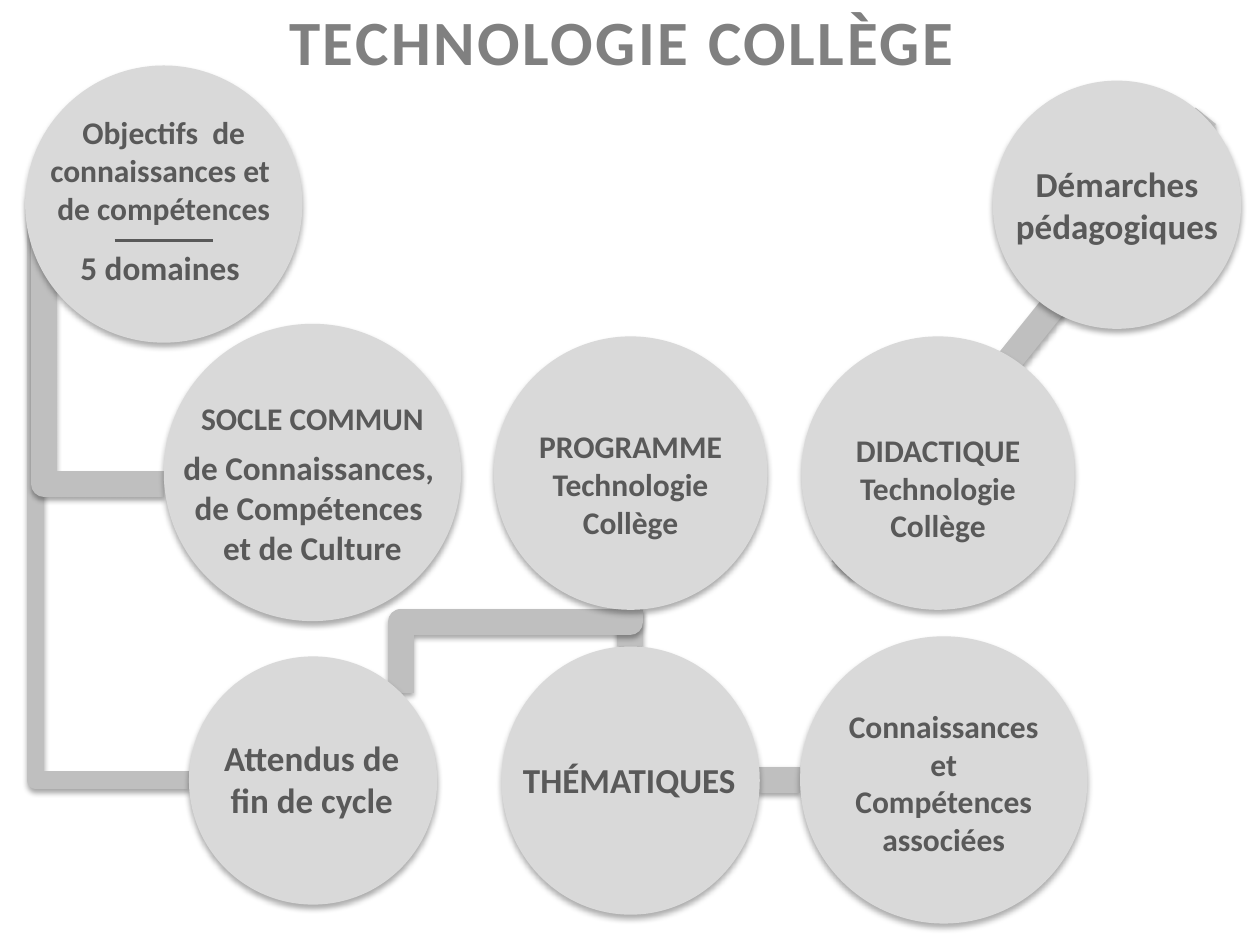
import pptx
import pptx.util
import pptx.dml.color
import pptx.enum.shapes
import pptx.enum.text
import pptx.oxml
import pptx.oxml.ns

Inches, Pt = pptx.util.Inches, pptx.util.Pt
ALIGN = pptx.enum.text.PP_ALIGN
CONNECTOR = pptx.enum.shapes.MSO_CONNECTOR
FONT = "Calibri"
COLORS = {"title": "808080", "text": "595959", "disc": "D9D9D9", "link": "BFBFBF", "shadow": "000000"}

TITLE = "TECHNOLOGIE COLLÈGE "

# start, end, width in points
STRAIGHT_LINKS = [
    ((5, 5.13), (5, 4.83), 15),
    ((6.02, 6.19), (6.35, 6.19), 15),
    ((9.57, 0.92), (6.68, 4.52), 15),
]
# start, end, width in points, preset, rotation, flipped, bend position
BENT_LINKS = [
    ((5, 4.83), (3.18, 5.5), 15, "bentConnector3", 90, False, 0.16),
    ((0.28, 1.55), (1.5, 6.19), 10, "bentConnector2", 270, True, None),
    ((1.3, 3.84), (0.35, 1.47), 15, "bentConnector2", 180, False, None),
]

# The programme disc holds its own text: (text, size, space before)
PROGRAMME = {
    "disc": (3.92, 2.67, 2.17, 2.17),
    "lines": [("PROGRAMME", 18, 0), ("Technologie", 18, 0), ("Collège", 18, 0)],
}
# The other topics have a label laid over the disc
TOPICS = [
    {"disc": (1.3, 2.57, 2.36, 2.36), "label": (1.3, 3.12, 2.36, 1.45),
     "lines": [("SOCLE COMMUN", 18, 0), ("de Connaissances, ", 19, 6),
               ("de Compétences ", 19, 0), ("et de Culture", 19, 0)]},
    {"disc": (1.5, 5.21, 1.97, 1.97), "label": (1.61, 5.8, 1.73, 0.77),
     "lines": [("Attendus de", 20, 0), ("fin de cycle", 20, 0)]},
    {"disc": (6.35, 5.05, 2.28, 2.28), "label": (6.39, 5.56, 2.2, 1.31),
     "lines": [("Connaissances", 18, 0), ("et", 18, 0), ("Compétences associées", 18, 0)]},
    {"disc": (3.98, 5.13, 2.05, 2.13), "label": (3.93, 5.97, 2.13, 0.45),
     "lines": [("THÉMATIQUES", 20, 0)]},
    {"disc": (6.36, 2.67, 2.17, 2.17), "label": (6.51, 3.37, 1.87, 1.01),
     "lines": [("DIDACTIQUE", 18, 0), ("Technologie Collège", 18, 0)]},
    {"disc": (7.88, 0.64, 1.97, 1.97), "label": (7.77, 1.24, 2.19, 0.77),
     "lines": [("Démarches pédagogiques", 20, 0)]},
    {"disc": (0.2, 0.52, 2.2, 2.2), "label": (0.12, 0.85, 2.36, 1.55),
     "lines": [("Objectifs  de connaissances et ", 18, 0), ("de compétences", 18, 0),
               ("5 domaines ", 19, 12)],
     "rule": ((0.91, 1.91), (1.69, 1.91))},
]


def rgb(name):
    return pptx.dml.color.RGBColor.from_string(COLORS[name])


def add_effects(shape, blur=None, distance=None, opacity=None):
    """Replace the theme's effects by a downward shadow, or by none."""
    properties = shape._element.spPr
    for old in properties.findall(pptx.oxml.ns.qn("a:effectLst")):
        properties.remove(old)
    shadow = ""
    if blur is not None:
        shadow = (f'<a:outerShdw blurRad="{Pt(blur)}" dist="{Pt(distance)}" dir="5400000" rotWithShape="0">'
                  f'<a:srgbClr val="{COLORS["shadow"]}"><a:alpha val="{opacity * 1000}"/></a:srgbClr>'
                  '</a:outerShdw>')
    properties.append(pptx.oxml.parse_xml(
        f'<a:effectLst {pptx.oxml.ns.nsdecls("a")}>{shadow}</a:effectLst>'))


def add_line(shapes, start, end, width, color, kind=CONNECTOR.STRAIGHT):
    line = shapes.add_connector(kind, *(Inches(v) for v in start + end))
    line.line.width = Pt(width)
    line.line.color.rgb = rgb(color)
    return line


def add_link(shapes, start, end, width, kind=CONNECTOR.STRAIGHT):
    link = add_line(shapes, start, end, width, "link", kind)
    add_effects(link, 3.1, 1.8, 35)
    return link


def add_bent_link(shapes, start, end, width, preset, rotation, flipped, bend):
    """Place an elbow by its unrotated frame, centred between its two ends."""
    link = add_link(shapes, start, end, width, CONNECTOR.ELBOW)
    w, h = (abs(b - a) for a, b in zip(start, end))
    if rotation % 180:
        w, h = h, w
    center_x, center_y = ((a + b) / 2 for a, b in zip(start, end))
    link.left, link.top = Inches(center_x - w / 2), Inches(center_y - h / 2)
    link.width, link.height = Inches(w), Inches(h)
    frame = link._element.spPr.find(pptx.oxml.ns.qn("a:xfrm"))
    for flip in ("flipH", "flipV"):
        frame.attrib.pop(flip, None)
    frame.set("rot", str(rotation * 60000))
    if flipped:
        frame.set("flipH", "1")
    geometry = link._element.spPr.find(pptx.oxml.ns.qn("a:prstGeom"))
    geometry.set("prst", preset)
    if bend is not None:
        for old in list(geometry):
            geometry.remove(old)
        geometry.append(pptx.oxml.parse_xml(
            f'<a:avLst {pptx.oxml.ns.nsdecls("a")}>'
            f'<a:gd name="adj1" fmla="val {round(bend * 100000)}"/></a:avLst>'))


def add_disc(shapes, box):
    disc = shapes.add_shape(pptx.enum.shapes.MSO_SHAPE.OVAL, *(Inches(v) for v in box))
    disc.fill.solid()
    disc.fill.fore_color.rgb = rgb("disc")
    disc.line.fill.background()
    add_effects(disc, 3.5, 2.2, 32)
    return disc


def write_lines(frame, lines, color="text"):
    frame.word_wrap = True
    for index, (text, size, before) in enumerate(lines):
        paragraph = frame.paragraphs[0] if index == 0 else frame.add_paragraph()
        paragraph.text = text
        paragraph.alignment = ALIGN.CENTER
        if before:
            paragraph.space_before = Pt(before)
        font = paragraph.font
        font.name, font.size, font.bold = FONT, Pt(size), True
        font.color.rgb = rgb(color)


def add_label(shapes, box, lines, color="text"):
    frame = shapes.add_textbox(*(Inches(v) for v in box)).text_frame
    write_lines(frame, lines, color)
    return frame


def main():
    deck = pptx.Presentation()
    deck.slide_width, deck.slide_height = Inches(10), Inches(7.5)
    shapes = deck.slides.add_slide(deck.slide_layouts[6]).shapes

    for link in STRAIGHT_LINKS:
        add_link(shapes, *link)
    for link in BENT_LINKS:
        add_bent_link(shapes, *link)

    title = add_label(shapes, (0, -0.03, 10, 0.71), [(TITLE, 36, 0)], "title")
    title.paragraphs[0].runs[0]._r.get_or_add_rPr().set("spc", "150")

    programme = add_disc(shapes, PROGRAMME["disc"]).text_frame
    programme.margin_left = programme.margin_right = 0
    programme.margin_top, programme.margin_bottom = Inches(0.22), Inches(0.05)
    programme.vertical_anchor = pptx.enum.text.MSO_ANCHOR.MIDDLE
    write_lines(programme, PROGRAMME["lines"])

    for topic in TOPICS:
        group = shapes.add_group_shape().shapes
        add_disc(group, topic["disc"])
        add_label(group, topic["label"], topic["lines"])
        if "rule" in topic:
            add_effects(add_line(group, *topic["rule"], 2, "text"))

    deck.save("out.pptx")


if __name__ == "__main__":
    main()
